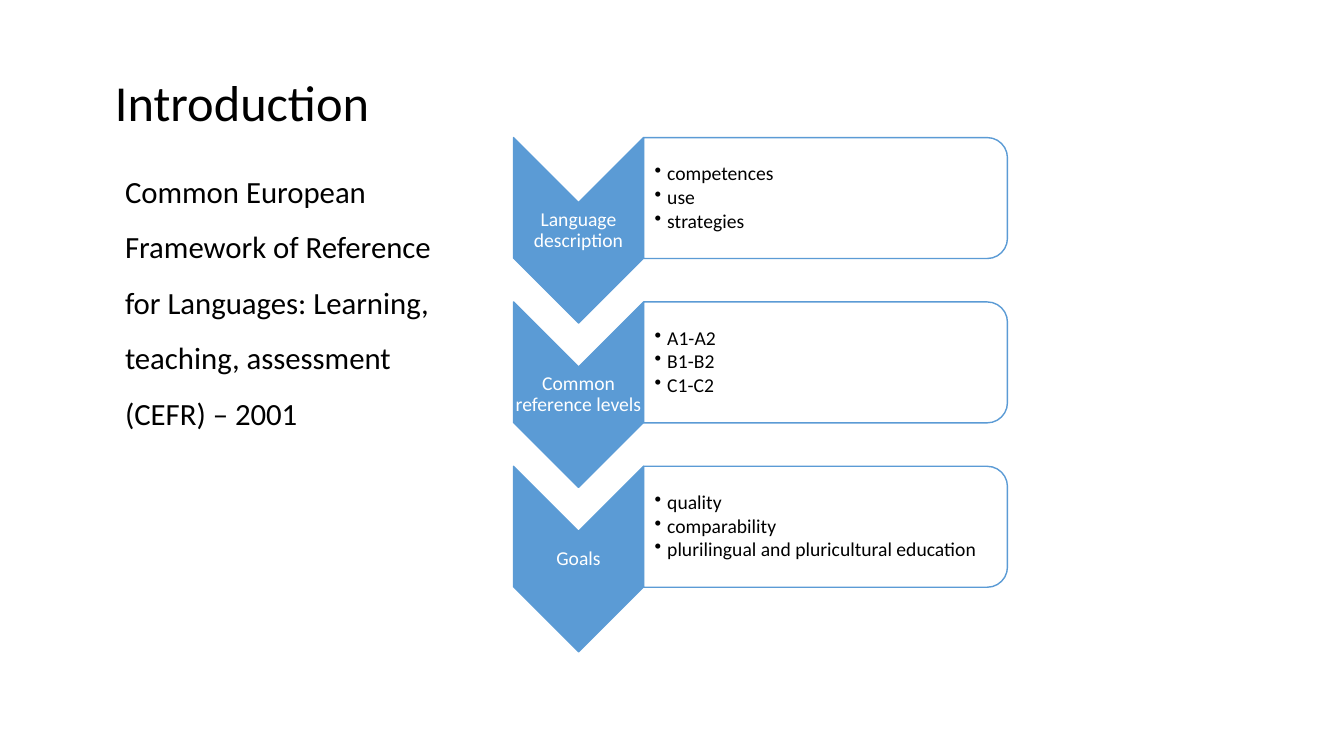
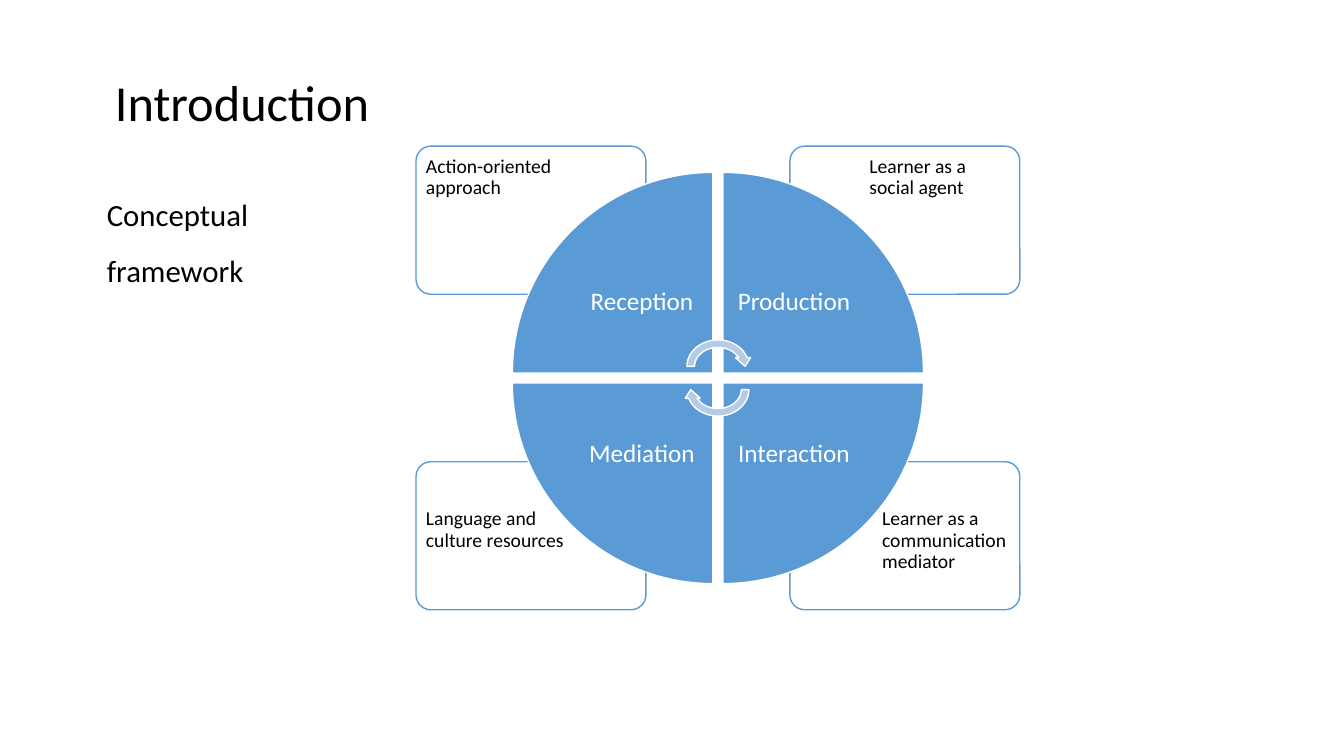
from dataclasses import dataclass
from typing import Any, NamedTuple

import lxml.etree
import pptx
import pptx.dml.color
import pptx.enum.shapes
import pptx.enum.text
import pptx.oxml.ns
import pptx.util

Pt = pptx.util.Pt
RGB = pptx.dml.color.RGBColor
Shapes = pptx.enum.shapes.MSO_SHAPE
Anchor = pptx.enum.text.MSO_ANCHOR
Align = pptx.enum.text.PP_ALIGN
qn = pptx.oxml.ns.qn


@dataclass(frozen=True)
class Theme:
    font: str = "Calibri"
    ink: RGB = RGB(0x00, 0x00, 0x00)
    paper: RGB = RGB(0xFF, 0xFF, 0xFF)
    accent: RGB = RGB(0x5B, 0x9B, 0xD5)
    accent_pale: RGB = RGB(0xB5, 0xCB, 0xE7)
    panel_alpha: int = 90000
    title_size: float = 36
    lead_size: float = 22
    wedge_size: float = 18
    detail_size: float = 14
    line_width: float = 1


THEME = Theme()


class Box(NamedTuple):
    left: float
    top: float
    width: float
    height: float


class Stage(NamedTuple):
    label: str
    points: list[str]


class Quadrant(NamedTuple):
    column: int
    row: int
    skill: str
    principle: str
    turn: int
    indent: float = 0


STAGES = [
    Stage("Language description", ["competences", "use", "strategies"]),
    Stage("Common reference levels", ["A1-A2", "B1-B2", "C1-C2"]),
    Stage("Goals", ["quality", "comparability", "plurilingual and pluricultural education"]),
]
QUADRANTS = [
    Quadrant(0, 0, "Reception", "Action-oriented approach", 0),
    Quadrant(1, 0, "Production", "Learner as a social agent", 90),
    Quadrant(1, 1, "Interaction", "Learner as a communication mediator", 180, 9),
    Quadrant(0, 1, "Mediation", "Language and culture resources", 270),
]

TITLE_BOX = Box(74.9, 33.1, 765.4, 64.8)
CHEVRON_WIDTH, CHEVRON_HEIGHT = 92.9, 132.5
STAGE_LEFT, STAGE_TOP, STAGE_PITCH = 366.8, 98.3, 117.4
PANEL_WIDTH, PANEL_HEIGHT, PANEL_PAD = 259.9, 86.4, 4
BULLET_INDENT = 9
WHEEL_X, WHEEL_Y = 512.8, 270
WHEEL_GAP = 7.1


def apply_format(target: Any, values: dict[str, Any]) -> None:
    for attribute, value in values.items():
        setattr(target, attribute, value)


def place(target: Any, box: Box) -> None:
    apply_format(target, {name: Pt(value) for name, value in box._asdict().items()})


def add_bullet(paragraph: Any) -> None:
    properties = paragraph._p.get_or_add_pPr()
    properties.set("marL", str(Pt(BULLET_INDENT)))
    properties.set("indent", str(-Pt(BULLET_INDENT)))
    lxml.etree.SubElement(properties, qn("a:buChar"), char="•")


def write(frame: Any, lines: list[str], size: float, color: RGB, *,
          anchor: Any = Anchor.TOP, align: Any = Align.LEFT, spacing: float = 0.9,
          margins: tuple[float, float, float, float] = (7.2, 3.6, 7.2, 3.6),
          bulleted: bool = False) -> None:
    """Fill a text frame; margins run left, top, right, bottom."""
    sides = ("margin_left", "margin_top", "margin_right", "margin_bottom")
    apply_format(frame, {
        "text": "\n".join(lines),
        "word_wrap": True,
        "auto_size": pptx.enum.text.MSO_AUTO_SIZE.NONE,
        "vertical_anchor": anchor,
        **{side: Pt(margin) for side, margin in zip(sides, margins)},
    })
    for paragraph in frame.paragraphs:
        apply_format(paragraph, {
            "alignment": align,
            "line_spacing": spacing,
            "space_before": Pt(0),
            "space_after": Pt(1.8 if bulleted else 0),
        })
        if bulleted:
            add_bullet(paragraph)
        apply_format(paragraph.font, {"name": THEME.font, "size": Pt(size)})
        paragraph.font.color.rgb = color


def add_text(slide: Any, box: Box, lines: list[str], size: float, color: RGB,
             **layout: Any) -> None:
    write(slide.shapes.add_textbox(*map(Pt, box)).text_frame, lines, size, color, **layout)


def add_figure(slide: Any, kind: Any, box: Box, fill: RGB, line: RGB, turn: int = 0) -> Any:
    """Draw a preset shape that covers the box once it has been turned."""
    if turn % 180:
        left, top, width, height = box
        shift = (width - height) / 2
        box = Box(left + shift, top - shift, height, width)
    figure = slide.shapes.add_shape(kind, *map(Pt, box))
    figure.rotation = turn
    figure.shadow.inherit = False
    figure.fill.solid()
    figure.fill.fore_color.rgb = fill
    figure.line.color.rgb = line
    figure.line.width = Pt(THEME.line_width)
    return figure


def add_panel(slide: Any, kind: Any, box: Box, turn: int = 0) -> Any:
    """Draw a slightly transparent outlined panel."""
    panel = add_figure(slide, kind, box, THEME.paper, THEME.accent, turn)
    color = panel._element.spPr.find(qn("a:solidFill")).find(qn("a:srgbClr"))
    lxml.etree.SubElement(color, qn("a:alpha"), val=str(THEME.panel_alpha))
    return panel


def add_intro_slide(deck: Any, lead: str, lead_box: Box) -> Any:
    slide = deck.slides.add_slide(deck.slide_layouts[0])
    title, subtitle = slide.shapes.title, slide.placeholders[1]
    place(title, TITLE_BOX)
    write(title.text_frame, ["Introduction"], THEME.title_size, THEME.ink, anchor=Anchor.BOTTOM)
    place(subtitle, lead_box)
    write(subtitle.text_frame, [lead], THEME.lead_size, THEME.ink, spacing=1.5)
    return slide


def draw_stage(slide: Any, stage: Stage, top: float) -> None:
    chevron = Box(STAGE_LEFT, top, CHEVRON_WIDTH, CHEVRON_HEIGHT)
    add_figure(slide, Shapes.CHEVRON, chevron, THEME.accent, THEME.accent, 90)
    label = Box(STAGE_LEFT, top + CHEVRON_WIDTH / 2, CHEVRON_WIDTH,
                CHEVRON_HEIGHT - CHEVRON_WIDTH)
    add_text(slide, label, [stage.label], THEME.detail_size, THEME.paper,
             anchor=Anchor.MIDDLE, align=Align.CENTER, margins=(0.7,) * 4)

    panel_left = STAGE_LEFT + CHEVRON_WIDTH
    add_panel(slide, Shapes.ROUND_2_SAME_RECTANGLE,
              Box(panel_left, top, PANEL_WIDTH, PANEL_HEIGHT), 90)
    points = Box(panel_left, top + PANEL_PAD, PANEL_WIDTH - PANEL_PAD,
                 PANEL_HEIGHT - 2 * PANEL_PAD)
    add_text(slide, points, stage.points, THEME.detail_size, THEME.ink,
             anchor=Anchor.MIDDLE, margins=(7.9, 0.7, 0.7, 0.7), bulleted=True)


def quadrant_box(quadrant: Quadrant, width: float, height: float,
                 gap_x: float, gap_y: float) -> Box:
    """Place a box in its quadrant, with the gaps centred on the wheel."""
    left = WHEEL_X - gap_x / 2 - width + quadrant.column * (width + gap_x)
    top = WHEEL_Y - gap_y / 2 - height + quadrant.row * (height + gap_y)
    return Box(left, top, width, height)


def draw_principle(slide: Any, quadrant: Quadrant) -> None:
    card = add_panel(slide, Shapes.ROUNDED_RECTANGLE,
                     quadrant_box(quadrant, 164.2, 105.8, 102.9, 119.6))
    card.adjustments[0] = 0.1
    add_text(slide, quadrant_box(quadrant, 110.2, 74.9, 206.6, 177.1),
             [quadrant.principle], THEME.detail_size, THEME.ink,
             margins=(5 + quadrant.indent, 5, 5, 5))


def draw_skill(slide: Any, quadrant: Quadrant) -> None:
    add_figure(slide, Shapes.PIE_WEDGE,
               quadrant_box(quadrant, 143.3, 143.3, WHEEL_GAP, WHEEL_GAP),
               THEME.accent, THEME.paper, quadrant.turn)
    add_text(slide, quadrant_box(quadrant, 101.5, 101.5, WHEEL_GAP, WHEEL_GAP),
             [quadrant.skill], THEME.wedge_size, THEME.paper,
             anchor=Anchor.MIDDLE, align=Align.CENTER, margins=(10,) * 4)


def draw_cycle_arrows(slide: Any) -> None:
    width, height, offset = 49.7, 43.2, 8.3
    for turn, shift in ((0, -offset), (180, offset)):
        arrow = Box(WHEEL_X - width / 2, WHEEL_Y + shift - height / 2, width, height)
        add_figure(slide, Shapes.CIRCULAR_ARROW, arrow, THEME.accent_pale, THEME.paper, turn)


def main() -> None:
    deck = pptx.Presentation()
    apply_format(deck, {"slide_width": Pt(960), "slide_height": Pt(540)})

    reference = add_intro_slide(
        deck,
        "Common European Framework of Reference for Languages: "
        "Learning, teaching, assessment (CEFR) – 2001",
        Box(82.1, 106.6, 252.7, 184.3))
    for index, stage in enumerate(STAGES):
        draw_stage(reference, stage, STAGE_TOP + index * STAGE_PITCH)

    concept = add_intro_slide(deck, "Conceptual framework", Box(69.1, 123.1, 173.5, 121))
    for draw in (draw_principle, draw_skill):
        for quadrant in QUADRANTS:
            draw(concept, quadrant)
    draw_cycle_arrows(concept)

    deck.save("out.pptx")


if __name__ == "__main__":
    main()
